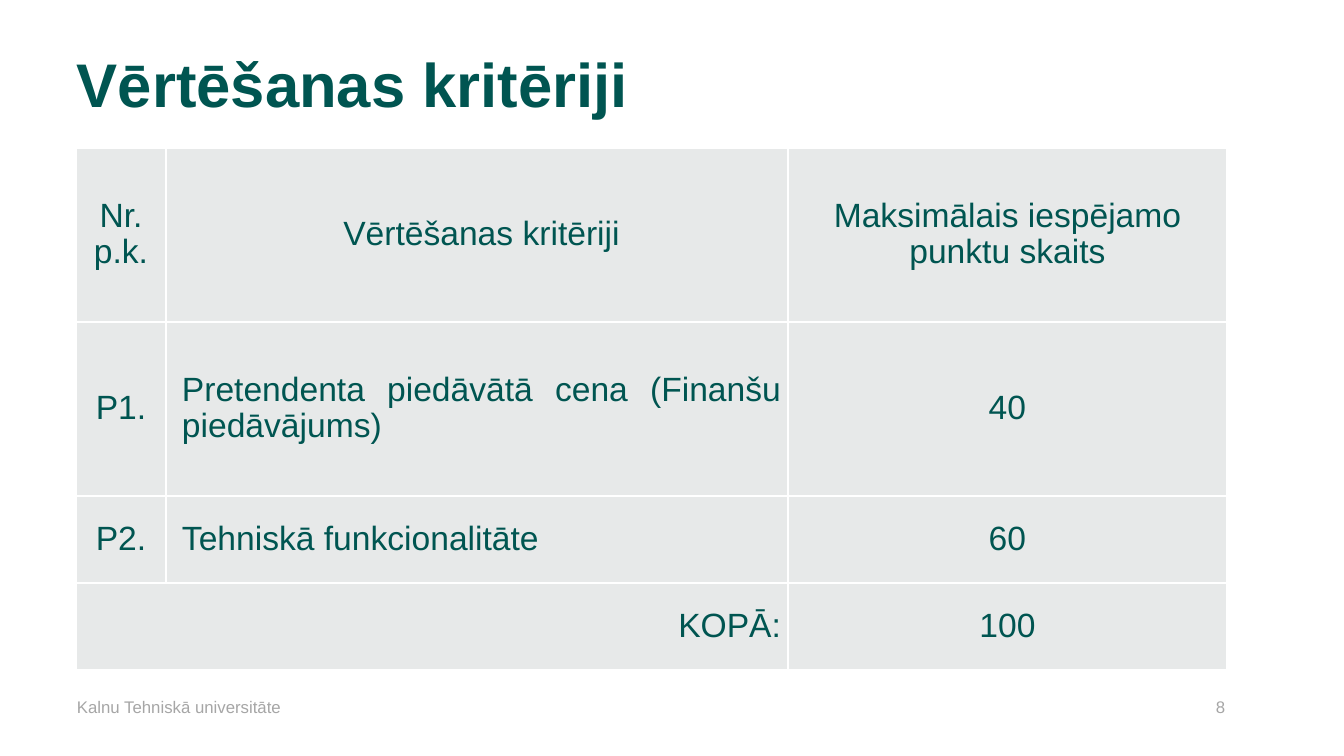
from lxml.etree import SubElement
from pptx import Presentation
from pptx.dml.color import RGBColor
from pptx.enum.text import MSO_ANCHOR as Anchor, PP_ALIGN as Align
from pptx.oxml import parse_xml
from pptx.oxml.ns import nsdecls, qn
from pptx.util import Pt

PX = 914400 / 100.8
GREEN = RGBColor(0x00, 0x55, 0x51)
GREY = RGBColor(0xA6, 0xA6, 0xA6)
PALE = RGBColor(0xE7, 0xE9, 0xE9)
WHITE = RGBColor(0xFF, 0xFF, 0xFF)

COLUMN_WIDTHS = [90, 622, 439]
ROW_HEIGHTS = [174, 174, 87, 87]
CRITERIA_ROWS = [
    ["Nr.\np.k.", "Vērtēšanas kritēriji", "Maksimālais iespējamo\npunktu skaits"],
    ["P1.", "Pretendenta piedāvātā cena (Finanšu piedāvājums)", "40"],
    ["P2.", "Tehniskā funkcionalitāte", "60"],
    ["KOPĀ:", "", "100"],
]


def px(length):
    """Turn pixels into EMU."""
    return round(length * PX)


def write_text(frame, text, *, size, color, bold=False, align=Align.LEFT,
               spacing=None, indent=0):
    """Fill a text frame with one formatted paragraph per line."""
    frame.word_wrap = True
    for index, line in enumerate(text.split("\n")):
        paragraph = frame.add_paragraph() if index else frame.paragraphs[0]
        paragraph.alignment = align
        paragraph.line_spacing = spacing
        if indent:
            properties = paragraph._p.get_or_add_pPr()
            properties.set("marL", str(px(indent)))
            properties.set("indent", "0")
        run = paragraph.add_run()
        run.text = line
        run.font.name = "Arial"
        run.font.size = Pt(size)
        run.font.bold = bold
        run.font.color.rgb = color


def add_text(slide, text, left, top, width, height, *, anchor=Anchor.TOP, **text_format):
    """Place a text box on the slide."""
    box = slide.shapes.add_textbox(px(left), px(top), px(width), px(height))
    box.text_frame.vertical_anchor = anchor
    write_text(box.text_frame, text, **text_format)


def add_borders(cell, color):
    """Draw a thin line on all four sides of a cell."""
    properties = cell._tc.get_or_add_tcPr()
    for index, side in enumerate(("lnL", "lnR", "lnT", "lnB")):
        line = parse_xml(f'<a:{side} {nsdecls("a")} w="{Pt(1)}"/>')
        fill = SubElement(line, qn("a:solidFill"))
        SubElement(fill, qn("a:srgbClr"), val=str(color))
        properties.insert(index, line)


def style_cell(cell):
    """Give a cell its fill, margins, anchor and borders."""
    cell.fill.solid()
    cell.fill.fore_color.rgb = PALE
    cell.margin_left = cell.margin_right = px(7)
    cell.margin_top = cell.margin_bottom = 0
    cell.vertical_anchor = Anchor.MIDDLE
    add_borders(cell, WHITE)


def cell_alignment(row, column):
    """Choose the alignment for a cell by its place."""
    if column == 1 and row > 0:
        return Align.JUSTIFY
    if column == 0 and row == len(CRITERIA_ROWS) - 1:
        return Align.RIGHT
    return Align.CENTER


def add_criteria_table(slide, left, top):
    """Add the table of criteria with its merged total row."""
    table = slide.shapes.add_table(
        len(ROW_HEIGHTS), len(COLUMN_WIDTHS), px(left), px(top),
        px(sum(COLUMN_WIDTHS)), px(sum(ROW_HEIGHTS))).table
    table.first_row = table.horz_banding = False
    for column, width in zip(table.columns, COLUMN_WIDTHS):
        column.width = px(width)
    for row, height in zip(table.rows, ROW_HEIGHTS):
        row.height = px(height)
    for row, texts in enumerate(CRITERIA_ROWS):
        for column, text in enumerate(texts):
            cell = table.cell(row, column)
            style_cell(cell)
            if text:
                write_text(cell.text_frame, text, size=24, color=GREEN, spacing=0.95,
                           align=cell_alignment(row, column),
                           indent=9 if column == 1 else 0)
    last = len(ROW_HEIGHTS) - 1
    table.cell(last, 0).merge(table.cell(last, 1))


def main():
    """Build and save the slide."""
    presentation = Presentation()
    presentation.slide_width, presentation.slide_height = px(1344), px(756)
    slide = presentation.slides.add_slide(presentation.slide_layouts[6])
    add_text(slide, "Vērtēšanas kritēriji", 67, 40, 1210, 85,
             anchor=Anchor.MIDDLE, size=44, color=GREEN, bold=True)
    add_criteria_table(slide, 76, 148)
    add_text(slide, "Kalnu Tehniskā universitāte", 67, 692, 363, 40, size=12, color=GREY)
    add_text(slide, "8", 1206, 692, 70, 40, size=12, color=GREY)
    presentation.save("out.pptx")


if __name__ == "__main__":
    main()
